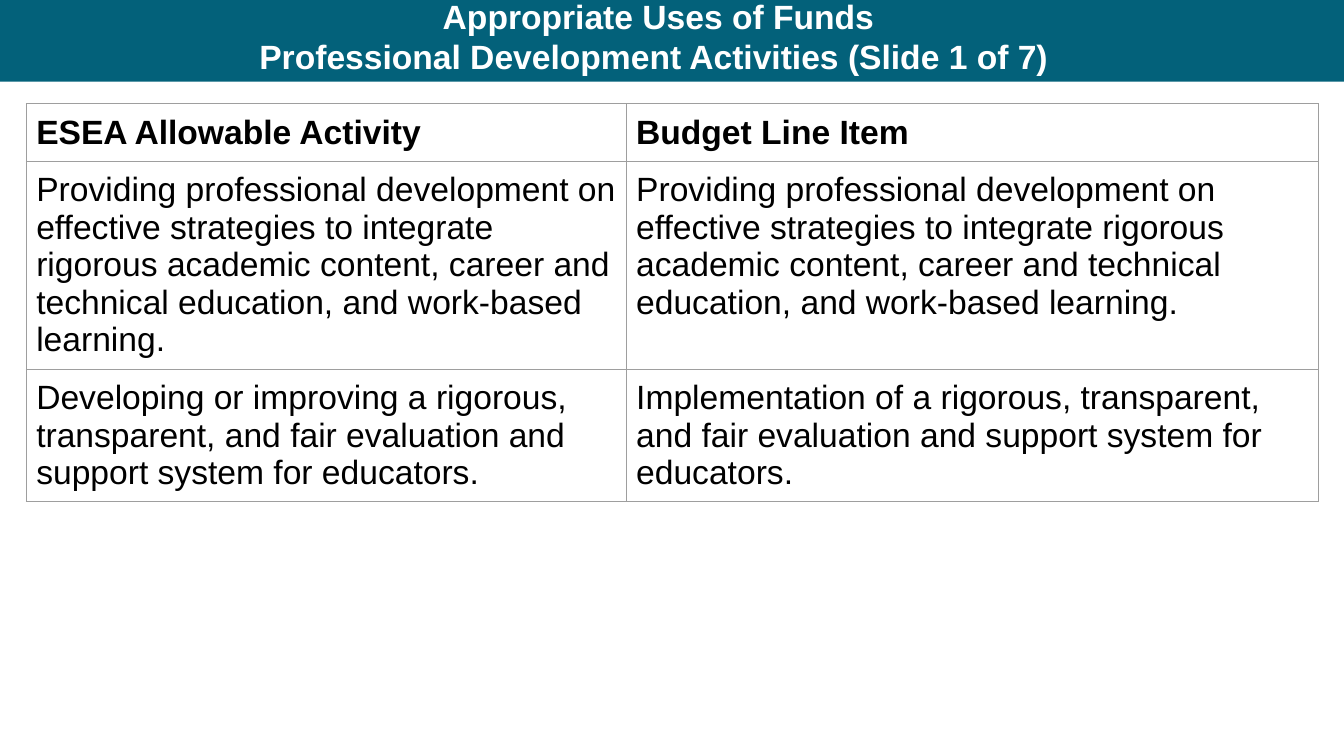
from lxml import etree
from pptx import Presentation
from pptx.dml.color import RGBColor
from pptx.enum.shapes import MSO_SHAPE
from pptx.enum.text import MSO_ANCHOR, MSO_AUTO_SIZE, PP_ALIGN
from pptx.oxml.ns import qn
from pptx.util import Inches, Pt

RECT = MSO_SHAPE.RECTANGLE
BOTTOM = MSO_ANCHOR.BOTTOM
TOP = MSO_ANCHOR.TOP
CENTER = PP_ALIGN.CENTER
LEFT = PP_ALIGN.LEFT
NO_FIT = MSO_AUTO_SIZE.NONE

COLORS = {"teal": "03617A", "white": "FFFFFF", "black": "000000", "grey": "9E9E9E"}

TITLE = [
    "Appropriate Uses of Funds",
    "Professional Development Activities (Slide 1 of 7) ",
]
TRAINING = (
    "Providing professional development on effective strategies to integrate "
    "rigorous academic content, career and technical education, "
    "and work-based learning."
)
ROWS = [
    ("ESEA Allowable Activity", "Budget Line Item"),
    (TRAINING, TRAINING),
    (
        "Developing or improving a rigorous, transparent, and fair evaluation "
        "and support system for educators.",
        "Implementation of a rigorous, transparent, and fair evaluation "
        "and support system for educators.",
    ),
]


class Deck:
    font = "Arial"
    size = 24

    def __init__(self, wide, high):
        self.prs = Presentation()
        self.prs.slide_width = Inches(wide)
        self.prs.slide_height = Inches(high)
        self.slide = self.prs.slides.add_slide(self.prs.slide_layouts[5])

    def color(self, name):
        return RGBColor.from_string(COLORS[name])

    def add_text(self, frame, lines, color, bold, align):
        for i, line in enumerate(lines):
            para = frame.add_paragraph() if i else frame.paragraphs[0]
            para.alignment = align
            para.line_spacing = 1.0
            para.space_before = para.space_after = Pt(0)
            run = para.add_run()
            run.text = line
            run.font.name = self.font
            run.font.size = Pt(self.size)
            run.font.bold = bold
            run.font.color.rgb = self.color(color)

    def band(self, box, color):
        """Draw a filled bar behind the title."""
        bar = self.slide.shapes.add_shape(RECT, *map(Inches, box))
        bar.shadow.inherit = False
        bar.fill.solid()
        bar.fill.fore_color.rgb = self.color(color)
        bar.line.fill.background()
        self.slide.shapes.title.element.addprevious(bar.element)

    def title(self, box, lines):
        shape = self.slide.shapes.title
        shape.left, shape.top, shape.width, shape.height = map(Inches, box)
        frame = shape.text_frame
        frame.word_wrap = True
        frame.auto_size = NO_FIT
        frame.vertical_anchor = BOTTOM
        frame.margin_left = frame.margin_right = Inches(0.1)
        frame.margin_top = frame.margin_bottom = Inches(0.05)
        self.add_text(frame, lines, "white", True, CENTER)

    def border(self, cell, color, width):
        props = cell._tc.get_or_add_tcPr()
        for i, side in enumerate(("lnL", "lnR", "lnT", "lnB")):
            line = etree.Element(qn("a:" + side), w=str(Pt(width)))
            fill = etree.SubElement(line, qn("a:solidFill"))
            etree.SubElement(fill, qn("a:srgbClr"), val=COLORS[color])
            props.insert(i, line)

    def table(self, left, top, widths, heights, rows):
        box = map(Inches, (left, top, sum(widths), sum(heights)))
        grid = self.slide.shapes.add_table(len(rows), len(widths), *box).table
        grid.first_row = grid.horz_banding = False
        for col, width in zip(grid.columns, widths):
            col.width = Inches(width)
        for r, (height, texts) in enumerate(zip(heights, rows)):
            grid.rows[r].height = Inches(height)
            for c, text in enumerate(texts):
                cell = grid.cell(r, c)
                cell.fill.background()
                cell.vertical_anchor = TOP
                cell.margin_left = cell.margin_right = Inches(0.1)
                cell.margin_top = cell.margin_bottom = Inches(0.1)
                self.border(cell, "grey", 0.75)
                self.add_text(cell.text_frame, [text], "black", r == 0, LEFT)


def main():
    deck = Deck(13.33, 7.5)
    deck.band((0, 0, 13.33, 0.81), "teal")
    deck.title((0.37, 0.27, 12.32, 0.54), TITLE)
    deck.table(0.26, 1.03, (5.95, 6.87), (0.57, 2.06, 1.31), ROWS)
    deck.prs.save("out.pptx")


if __name__ == "__main__":
    main()
